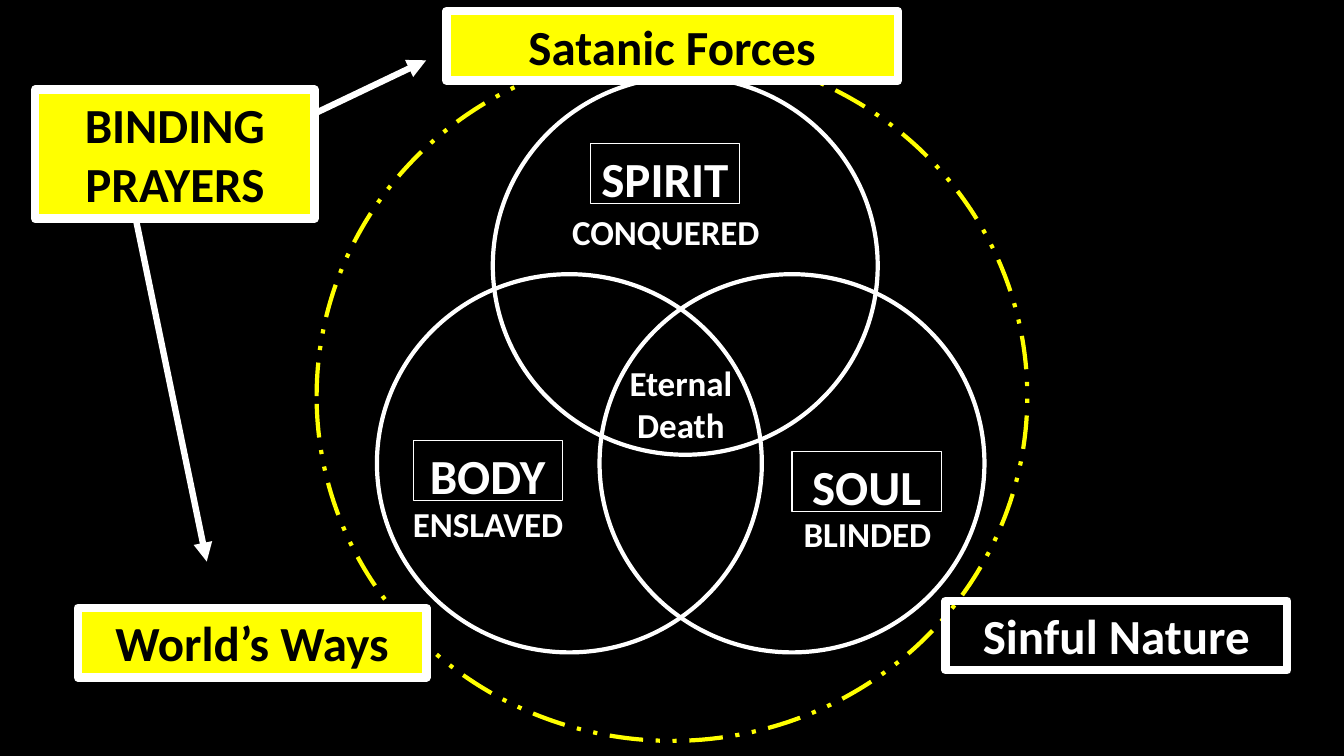
from lxml.etree import SubElement
from pptx import Presentation
from pptx.dml.color import RGBColor
from pptx.enum.dml import MSO_LINE
from pptx.enum.shapes import MSO_CONNECTOR, MSO_SHAPE
from pptx.enum.text import MSO_ANCHOR, MSO_AUTO_SIZE, PP_ALIGN
from pptx.oxml.ns import qn
from pptx.util import Cm, Pt

# Content: lengths in cm, sizes and line widths in points
BLACK, WHITE, YELLOW = "000000", "FFFFFF", "FFFF00"
HEADING, CAPTION = 35, 25

PRAYER_ARROWS = [((3.28, 4.83), (5.21, 14.15)), ((6.25, 3.66), (10.74, 1.52))]
OUTER_RING = (7.98, 1.3, 17.91, 17.37)
CIRCLE_SIZE = (9.7, 9.53)
CIRCLE_CORNERS = [(9.5, 6.91), (15.11, 6.91), (12.42, 1.93)]
PART_SIZE = (3.76, 1.52)
PARTS = [("SOUL", 19.96, 11.38), ("SPIRIT", 14.88, 3.61), ("BODY", 10.41, 11.1)]
STATES = [  # lines, centre x, top
    (["BLINDED"], 21.86, 12.78),
    (["CONQUERED"], 16.78, 5.18),
    (["ENSLAVED"], 12.3, 12.55),
    (["Eternal", "Death"], 17.16, 8.99),
]
STATE_WIDTH, STATE_LINE, STATE_MARGINS = 5.61, 1.07, 0.25
FORCES = [  # lines, place, fill, text colour
    (["World’s Ways"], (1.96, 15.32, 8.79, 1.75), YELLOW, BLACK),
    (["Sinful Nature"], (23.83, 15.14, 8.61, 1.75), None, WHITE),
    (["Satanic Forces"], (11.25, 0.28, 11.38, 1.75), YELLOW, BLACK),
    (["BINDING", "PRAYERS"], (0.89, 2.26, 7.04, 3.25), YELLOW, BLACK),
]
FRAME_FORMAT = {
    "auto_size": MSO_AUTO_SIZE.NONE,
    "vertical_anchor": MSO_ANCHOR.TOP,
}
FONT_FORMAT = {"name": "Calibri", "bold": True}


def paint(color_format, hex_color):
    color_format.rgb = RGBColor.from_string(hex_color)


def apply(target, values):
    for attribute, value in values.items():
        setattr(target, attribute, value)


def write(owner, lines, size, color, wrap=True):
    frame = owner.text_frame
    apply(frame, FRAME_FORMAT | {"word_wrap": wrap})
    for index, line in enumerate(lines):
        paragraph = frame.add_paragraph() if index else frame.paragraphs[0]
        paragraph.alignment = PP_ALIGN.CENTER
        run = paragraph.add_run()
        run.text = line
        apply(run.font, FONT_FORMAT | {"size": Pt(size)})
        paint(run.font.color, color)


def outline(container, kind, place, color, width, fill=None):
    figure = container.add_shape(kind, *map(Cm, place))
    figure.shadow.inherit = False
    if fill:
        figure.fill.solid()
        paint(figure.fill.fore_color, fill)
    else:
        figure.fill.background()
    paint(figure.line.color, color)
    figure.line.width = Pt(width)
    return figure


def arrow(container, start, end):
    connector = container.add_connector(
        MSO_CONNECTOR.STRAIGHT, *map(Cm, start + end))
    paint(connector.line.color, WHITE)
    connector.line.width = Pt(4.5)
    SubElement(connector.get_or_add_ln(), qn("a:tailEnd"), type="triangle")
    SubElement(connector._element.spPr, qn("a:effectLst"))


# Slide
deck = Presentation()
deck.slide_width, deck.slide_height = Cm(33.87), Cm(19.05)
slide = deck.slides.add_slide(deck.slide_layouts[6])
slide.background.fill.solid()
paint(slide.background.fill.fore_color, BLACK)

# Arrows and outer ring
for start, end in PRAYER_ARROWS:
    arrow(slide.shapes, start, end)
ring = outline(slide.shapes, MSO_SHAPE.OVAL, OUTER_RING, YELLOW, 3)
ring.line.dash_style = MSO_LINE.DASH_DOT_DOT

# Three overlapping circles with their labels
diagram = slide.shapes.add_group_shape().shapes
for corner in CIRCLE_CORNERS:
    outline(diagram, MSO_SHAPE.OVAL, corner + CIRCLE_SIZE, WHITE, 3)
for part, left, top in PARTS:
    label = outline(diagram, MSO_SHAPE.RECTANGLE, (left, top) + PART_SIZE, WHITE, 0.75)
    write(label, [part], HEADING, WHITE, wrap=False)
for lines, center, top in STATES:
    place = (center - STATE_WIDTH / 2, top, STATE_WIDTH,
             len(lines) * STATE_LINE + STATE_MARGINS)
    write(diagram.add_textbox(*map(Cm, place)), lines, CAPTION, WHITE)

# Framed forces around the circles
for lines, place, fill, color in FORCES:
    force = outline(slide.shapes, MSO_SHAPE.RECTANGLE, place, WHITE, 6, fill)
    write(force, lines, HEADING, color)

deck.save("out.pptx")
